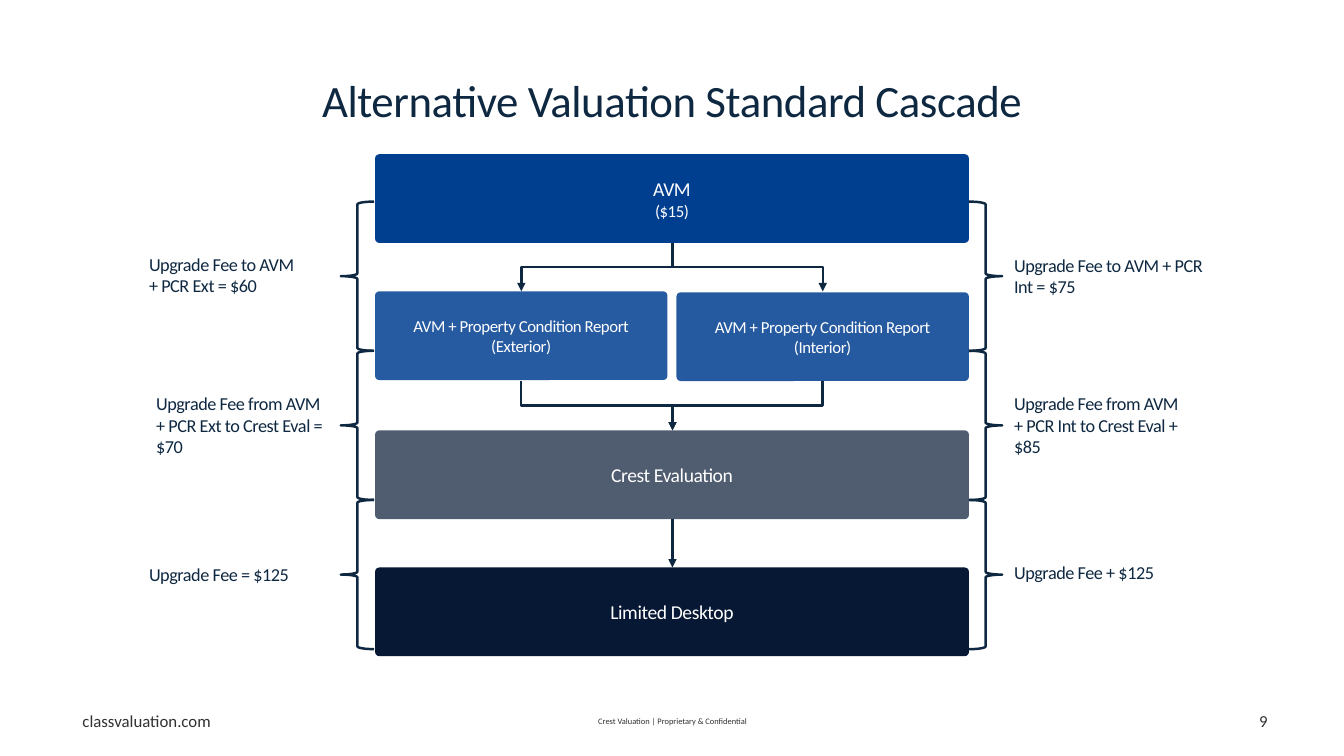
from dataclasses import dataclass

from pptx import Presentation
from pptx import util as u
from pptx.dml.color import RGBColor
from pptx.enum import shapes, text
from pptx.oxml import ns, xmlchemy

PX = 9144  # 100 px to the inch
FONT = "Calibri"
HEX = {
    "ink": "0E2841",
    "gray": "313131",
    "white": "FFFFFF",
    "blue": "003E90",
    "mid": "265BA1",
    "navy": "061834",
}
LEFT, CENTER, RIGHT = text.PP_ALIGN.LEFT, text.PP_ALIGN.CENTER, text.PP_ALIGN.RIGHT
TOP, MIDDLE, BOTTOM = (text.MSO_ANCHOR.TOP, text.MSO_ANCHOR.MIDDLE,
                       text.MSO_ANCHOR.BOTTOM)


@dataclass
class Label:
    words: str
    x: int
    y: int
    w: int
    h: int
    size: float = 13
    color: str = "ink"
    align: text.PP_ALIGN = LEFT
    anchor: text.MSO_ANCHOR = TOP
    tight: bool = True


@dataclass
class Step:
    words: str
    x: int
    y: int
    w: int
    fill: str
    sizes: tuple[int, ...]
    alpha: int = 100


@dataclass
class Arrow:
    x1: int
    y1: int
    x2: int
    y2: int


STEP_H = 88
MID = 667  # centre line of the cascade
EXT, INT = 517, 816  # centres of the two report boxes

LABELS = [
    Label("classvaluation.com", 72, 700, 196, 30, 12, "gray", tight=False),
    Label("Crest Valuation | Proprietary & Confidential", 442, 695, 450, 40,
          6, "gray", CENTER, MIDDLE, False),
    Label("9", 942, 695, 325, 40, 12, "gray", RIGHT, MIDDLE, False),
    Label("Upgrade Fee to AVM\v+ PCR Ext = $60", 138, 246, 193, 54),
    Label("Upgrade Fee from AVM + PCR Ext to Crest Eval = $70", 145, 384, 193, 76),
    Label("Upgrade Fee = $125", 138, 554, 193, 32),
    Label("Upgrade Fee to AVM + PCR Int = $75", 996, 247, 207, 54),
    Label("Upgrade Fee from AVM + PCR Int to Crest Eval + $85", 996, 384, 193, 76),
    Label("Upgrade Fee + $125", 996, 552, 193, 32),
]
TITLE = Label("Alternative Valuation Standard Cascade", 0, 18, 1333, 148,
              32, "ink", CENTER, BOTTOM)
STEPS = [
    Step("AVM\n($15)", 372, 153, 589, "blue", (14, 12)),
    Step("Crest Evaluation", 372, 427, 589, "navy", (14,), 70),
    Step("Limited Desktop", 372, 563, 589, "navy", (14,)),
    Step("AVM + Property Condition Report\n(Exterior)", 372, 289, 290, "mid", (12, 12)),
    Step("AVM + Property Condition Report\n(Interior)", 671, 290, 290, "blue",
         (12, 12), 85),
]
ARROWS = [
    Arrow(MID, 515, MID, 563),
    Arrow(MID, 241, EXT, 289),
    Arrow(MID, 241, INT, 289),
    Arrow(EXT, 378, MID, 427),
    Arrow(INT, 378, MID, 427),
]
BRACE_Y, BRACE_W, BRACE_H = 200, 33, 148


def rgb(name: str) -> RGBColor:
    return RGBColor.from_string(HEX[name])


def style(para, size: float, color: str, align, tight: bool) -> None:
    para.alignment = align
    for run in para.runs:
        run.font.size = u.Pt(size)
        run.font.name = FONT
        run.font.color.rgb = rgb(color)
        if tight:
            run.font._element.set("spc", "-30")


def add_label(slide, label: Label):
    box = slide.shapes.add_textbox(label.x * PX, label.y * PX,
                                   label.w * PX, label.h * PX)
    frame = box.text_frame
    frame.word_wrap = True
    frame.vertical_anchor = label.anchor
    frame.text = label.words
    style(frame.paragraphs[0], label.size, label.color, label.align, label.tight)
    return frame


def add_step(slide, step: Step) -> None:
    box = slide.shapes.add_shape(shapes.MSO_SHAPE.ROUNDED_RECTANGLE, step.x * PX,
                                 step.y * PX, step.w * PX, STEP_H * PX)
    box.adjustments[0] = 0.047
    box.shadow.inherit = False
    box.line.fill.background()
    box.fill.solid()
    box.fill.fore_color.rgb = rgb(step.fill)
    if step.alpha < 100:
        tint = box._element.spPr.find(".//" + ns.qn("a:srgbClr"))
        alpha = xmlchemy.OxmlElement("a:alpha")
        alpha.set("val", str(step.alpha * 1000))
        tint.append(alpha)
    frame = box.text_frame
    frame.word_wrap = True
    frame.vertical_anchor = MIDDLE
    frame.margin_left = frame.margin_right = 0
    frame.margin_top = frame.margin_bottom = 0
    frame.text = step.words
    for para, size in zip(frame.paragraphs, step.sizes):
        style(para, size, "white", CENTER, True)


def add_arrow(slide, arrow: Arrow) -> None:
    x1, y1, x2, y2 = (v * PX for v in (arrow.x1, arrow.y1, arrow.x2, arrow.y2))
    kind, turn = shapes.MSO_CONNECTOR.STRAIGHT, 0
    if x1 != x2:
        # An elbow leaves sideways, so lay it flat and turn it to leave downwards
        kind = shapes.MSO_CONNECTOR.ELBOW
        side, turn = (1, 90) if x2 < x1 else (-1, 270)
        mid_x, mid_y = (x1 + x2) // 2, (y1 + y2) // 2
        half_w, half_h = side * (y2 - y1) // 2, abs(x2 - x1) // 2
        x1, x2 = mid_x - half_w, mid_x + half_w
        y1, y2 = mid_y - half_h, mid_y + half_h
    line = slide.shapes.add_connector(kind, x1, y1, x2, y2)
    line.line.color.rgb = rgb("ink")
    line.line.width = u.Pt(1.75)
    props = line._element.spPr
    if turn:
        props.find(ns.qn("a:xfrm")).set("rot", str(turn * 60000))
    tip = xmlchemy.OxmlElement("a:tailEnd")
    tip.set("type", "triangle")
    props.find(ns.qn("a:ln")).append(tip)
    props.append(xmlchemy.OxmlElement("a:effectLst"))


def add_brace(slide, x: int, y: int, turn: int) -> None:
    brace = slide.shapes.add_shape(shapes.MSO_SHAPE.LEFT_BRACE, x * PX, y * PX,
                                   BRACE_W * PX, BRACE_H * PX)
    brace.rotation = turn
    brace.shadow.inherit = False
    brace.fill.background()
    brace.line.color.rgb = rgb("ink")
    brace.line.width = u.Pt(1.75)


def main() -> None:
    deck = Presentation()
    deck.slide_width, deck.slide_height = u.Inches(13.33), u.Inches(7.5)
    slide = deck.slides.add_slide(deck.slide_layouts[6])

    # Title
    frame = add_label(slide, TITLE)
    frame.margin_top, frame.margin_bottom = 0, 40 * PX
    frame.paragraphs[0].line_spacing = 0.9

    # Cascade
    for step in STEPS:
        add_step(slide, step)
    for arrow in ARROWS:
        add_arrow(slide, arrow)

    # Braces on both sides
    for x, turn in ((338, 0), (961, 180)):
        for row in range(3):
            add_brace(slide, x, BRACE_Y + row * BRACE_H, turn)

    # Fees and footer
    for label in LABELS:
        add_label(slide, label)

    deck.save("out.pptx")


if __name__ == "__main__":
    main()
